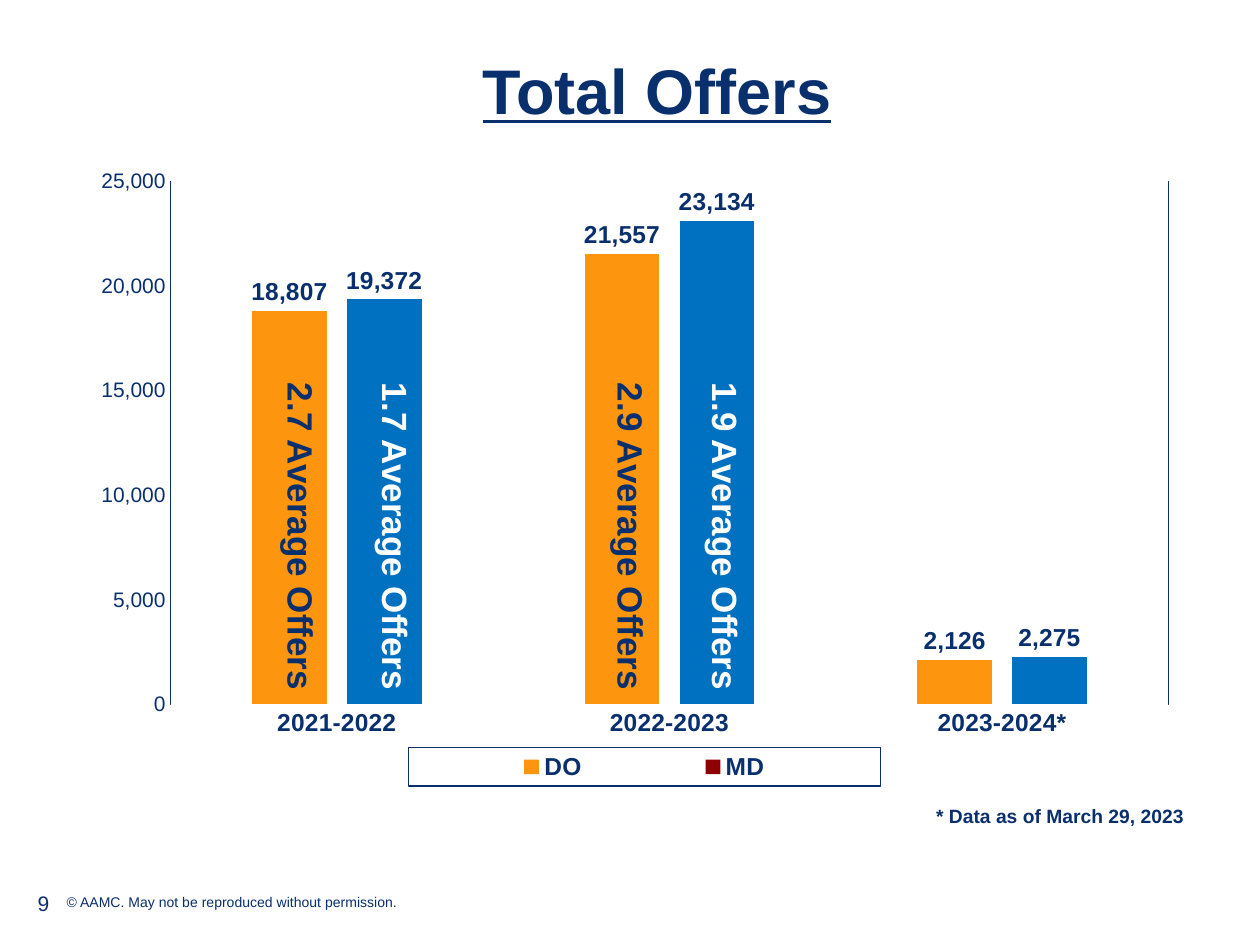
from dataclasses import dataclass

from pptx import Presentation
from pptx import oxml
from pptx import util as u
from pptx.chart import data as chart_data
from pptx.dml.color import RGBColor
from pptx.enum import chart as chart_enum
from pptx.enum import text
from pptx.oxml import ns


@dataclass(frozen=True)
class Theme:
    font: str = "Arial"
    navy: str = "092F6D"
    white: str = "FFFFFF"
    orange: str = "FD950E"
    blue: str = "0070C0"
    red: str = "8E0000"
    title: int = 36
    bar_note: int = 20
    label: int = 14
    axis: int = 12
    footnote: int = 11
    copyright: int = 8
    rule: float = 0.75


def format_font(font, theme, size, color=None, bold=False, underline=None):
    font.name = theme.font
    font.size = u.Pt(size)
    font.bold = bold
    font.color.rgb = RGBColor.from_string(color or theme.navy)
    if underline is not None:
        font.underline = underline


def write_text(frame, content, theme, align=None, spacing=None, **font_format):
    paragraph = frame.paragraphs[0]
    paragraph.alignment = align
    paragraph.line_spacing = spacing
    run = paragraph.add_run()
    run.text = content
    format_font(run.font, theme, **font_format)


def chart_xml(body):
    """Parse a fragment in the chart and drawing namespaces."""
    return oxml.parse_xml(body.replace(">", f" {ns.nsdecls('c', 'a')}>", 1))


def manual_layout(x, y, width, height, inner=False):
    target = '<c:layoutTarget val="inner"/>' if inner else ""
    return chart_xml(
        f"<c:layout><c:manualLayout>{target}"
        '<c:xMode val="edge"/><c:yMode val="edge"/>'
        f'<c:x val="{x}"/><c:y val="{y}"/>'
        f'<c:w val="{width}"/><c:h val="{height}"/>'
        "</c:manualLayout></c:layout>"
    )


def place(element, layout, index):
    """Give a chart part a manual layout in place of the automatic one."""
    for old_layout in element.findall(ns.qn("c:layout")):
        element.remove(old_layout)
    element.insert(index, layout)


class SlideBuilder:
    def __init__(self, slide, theme):
        self.slide = slide
        self.theme = theme

    def title(self, content, left, top, width, height):
        shape = self.slide.shapes.title
        shape.left, shape.top = u.Pt(left), u.Pt(top)
        shape.width, shape.height = u.Pt(width), u.Pt(height)
        frame = shape.text_frame
        frame.margin_left = frame.margin_right = 0
        frame.margin_top = frame.margin_bottom = 0
        frame.vertical_anchor = text.MSO_ANCHOR.BOTTOM
        frame.auto_size = text.MSO_AUTO_SIZE.NONE
        write_text(frame, content, self.theme, align=text.PP_ALIGN.CENTER,
                   spacing=0.85, size=self.theme.title, bold=True, underline=True)

    def text_box(self, content, left, top, width, height, vertical=False,
                 anchor=text.MSO_ANCHOR.TOP, **text_format):
        shape = self.slide.shapes.add_textbox(
            u.Pt(left), u.Pt(top), u.Pt(width), u.Pt(height))
        frame = shape.text_frame
        frame.word_wrap = not vertical
        frame.vertical_anchor = anchor
        if vertical:
            frame._txBody.bodyPr.set("vert", "vert")
        write_text(frame, content, self.theme, **text_format)

    def border(self):
        return chart_xml(
            f'<c:spPr><a:noFill/><a:ln w="{u.Pt(self.theme.rule)}"><a:solidFill>'
            f'<a:srgbClr val="{self.theme.navy}"/></a:solidFill></a:ln></c:spPr>'
        )

    def white_line(self, line):
        line.color.rgb = RGBColor.from_string(self.theme.white)
        line.width = u.Pt(self.theme.rule)

    def column_chart(self, categories, series_values, colors, point_colors,
                     left, top, width, height):
        theme = self.theme
        values = chart_data.CategoryChartData(number_format="#,##0")
        values.categories = categories
        for name, numbers in series_values.items():
            values.add_series(name, numbers)
        chart = self.slide.shapes.add_chart(
            chart_enum.XL_CHART_TYPE.COLUMN_CLUSTERED, u.Pt(left), u.Pt(top),
            u.Pt(width), u.Pt(height), values).chart
        chart.has_title = False
        format_font(chart.font, theme, size=theme.axis)

        # Columns and value labels
        plot = chart.plots[0]
        plot.gap_width, plot.overlap = 219, -27
        plot.vary_by_categories = False
        for series in plot.series:
            self.fill(series.format, colors[series.name])
            if series.name in point_colors:
                for index in range(len(categories)):
                    self.fill(series.points[index].format, point_colors[series.name])
            labels = series.data_labels
            labels.show_value = True
            labels.number_format, labels.number_format_is_linked = "#,##0", False
            labels.position = chart_enum.XL_LABEL_POSITION.OUTSIDE_END
            format_font(labels.font, theme, size=theme.label, bold=True)

        # Axes
        category_axis, value_axis = chart.category_axis, chart.value_axis
        for axis in (category_axis, value_axis):
            axis.major_tick_mark = axis.minor_tick_mark = chart_enum.XL_TICK_MARK.NONE
        format_font(category_axis.tick_labels.font, theme, size=theme.label, bold=True)
        self.white_line(category_axis.format.line)
        format_font(value_axis.tick_labels.font, theme, size=theme.axis)
        value_axis.tick_labels.number_format = "#,##0"
        value_axis.tick_labels.number_format_is_linked = False
        value_axis.minimum_scale, value_axis.maximum_scale = 0, 25000
        value_axis.major_unit = 5000
        value_axis.format.line.fill.background()
        self.white_line(value_axis.major_gridlines.format.line)

        # Legend and plot frame
        chart.has_legend = True
        legend = chart.legend
        legend.position = chart_enum.XL_LEGEND_POSITION.BOTTOM
        legend.include_in_layout = False
        format_font(legend.font, theme, size=theme.label, bold=True)
        place(legend._element, manual_layout(0.296, 0.924, 0.425, 0.06), 1)
        legend._element.find(ns.qn("c:overlay")).addnext(self.border())
        plot_area = chart._chartSpace.chart.plotArea
        place(plot_area, manual_layout(0.082, 0.036, 0.898, 0.82, inner=True), 0)
        plot_area.append(self.border())

    def fill(self, shape_format, color):
        shape_format.fill.solid()
        shape_format.fill.fore_color.rgb = RGBColor.from_string(color)


def main():
    theme = Theme()
    presentation = Presentation()
    presentation.slide_width, presentation.slide_height = u.Pt(720), u.Pt(540)
    slide = presentation.slides.add_slide(presentation.slide_layouts[5])
    builder = SlideBuilder(slide, theme)

    # Title and footer
    builder.title("Total Offers", 45.4, 23.8, 660, 49)
    builder.text_box("© AAMC. May not be reproduced without permission.",
                     31, 506.9, 592, 16.6, size=theme.copyright)
    builder.text_box("9", 14.4, 501.8, 162, 28.8, size=theme.axis,
                     anchor=text.MSO_ANCHOR.MIDDLE)

    # Offers per year
    builder.column_chart(
        ["2021-2022", "2022-2023", "2023-2024*"],
        {"DO": (18807, 21557, 2126), "MD": (19372, 23134, 2275)},
        {"DO": theme.orange, "MD": theme.red}, {"MD": theme.blue},
        45.4, 90.7, 635, 364.3)
    builder.text_box("* Data as of March 29, 2023", 527.8, 455.8, 163, 20.9,
                     size=theme.footnote, bold=True)

    # Average offers written down the columns
    averages = {"DO": (149, theme.navy, ("2.7", "2.9")),
                "MD": (203, theme.white, ("1.7", "1.9"))}
    for left, color, numbers in averages.values():
        for year, number in enumerate(numbers):
            builder.text_box(f"{number} Average Offers", left + year * 188.6, 211.7,
                             38.9, 184.3, vertical=True, size=theme.bar_note,
                             color=color, bold=True)

    presentation.save("out.pptx")


if __name__ == "__main__":
    main()
